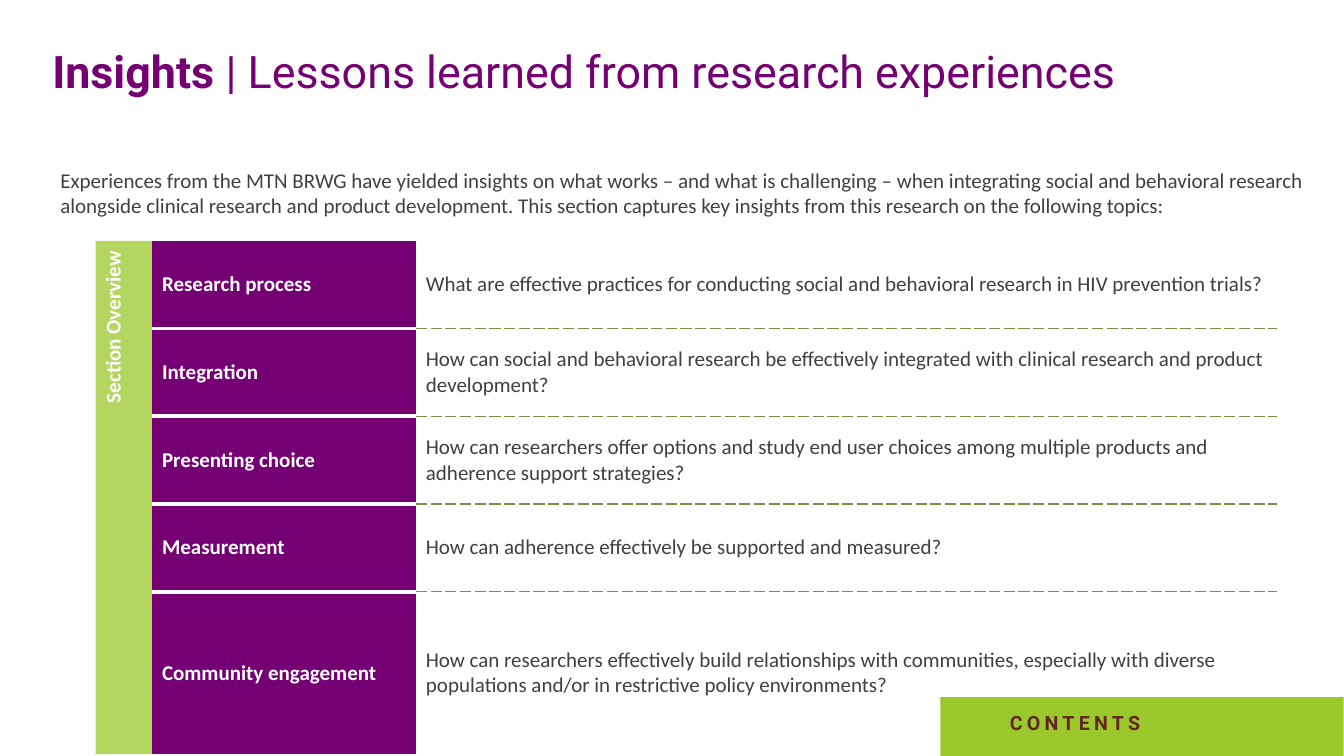
"""Build the Insights section overview slide."""
from dataclasses import dataclass

import lxml.etree
import pptx
import pptx.dml.color
import pptx.enum.shapes
import pptx.enum.text
import pptx.oxml.ns
import pptx.util

Cm = pptx.util.Cm
Pt = pptx.util.Pt
qn = pptx.oxml.ns.qn

COLOURS = {
    "purple": "740074",
    "green": "9BC82A",
    "dash": "77933C",
    "grey": "404040",
    "maroon": "632523",
    "white": "FFFFFF",
}
NO_GRID_STYLE = "{2D5ABB26-0587-4C30-8999-92F81FD0307C}"
COLUMN_WIDTHS = (1.42, 6.65, 21.69)
ROW_HEIGHT = 2.21


@dataclass(frozen=True)
class Style:
    size: float
    colour: str
    font: str = "Calibri"
    bold: bool = False
    spacing: int = 0


@dataclass(frozen=True)
class Topic:
    name: str
    question: str


@dataclass(frozen=True)
class Border:
    colour: str
    width: float
    dash: str


HEADING = Style(32, "purple", "Roboto", True)
SUBHEADING = Style(32, "purple", "Roboto")
BODY = Style(15, "grey")
LABEL = Style(15, "white", bold=True)
BUTTON = Style(14, "maroon", "Roboto", True, 3)

GAP = Border("white", 3, "solid")
RULE = Border("dash", 1, "sysDash")

INTRO = (
    "Experiences from the MTN BRWG have yielded insights on what works – and what is "
    "challenging – when integrating social and behavioral research alongside clinical "
    "research and product development. This section captures key insights from this "
    "research on the following topics:"
)
TOPICS = (
    Topic("Research process", "What are effective practices for conducting social and "
          "behavioral research in HIV prevention trials?"),
    Topic("Integration", "How can social and behavioral research be effectively integrated "
          "with clinical research and product development?"),
    Topic("Presenting choice", "How can researchers offer options and study end user choices "
          "among multiple products and adherence support strategies?"),
    Topic("Measurement", "How can adherence effectively be supported and measured?"),
    Topic("Community engagement", "How can researchers effectively build relationships with "
          "communities, especially with diverse populations and/or in restrictive policy "
          "environments?"),
)


def rgb(name: str) -> pptx.dml.color.RGBColor:
    return pptx.dml.color.RGBColor.from_string(COLOURS[name])


def add_span(para, text: str, style: Style) -> None:
    span = para.add_run()
    span.text = text
    span.font.size = Pt(style.size)
    span.font.name = style.font
    span.font.bold = style.bold
    span.font.color.rgb = rgb(style.colour)
    if style.spacing:
        span._r.get_or_add_rPr().set("spc", str(style.spacing * 100))


def add_text(shapes, place: tuple, *spans: tuple[str, Style]):
    box = shapes.add_textbox(*(Cm(length) for length in place))
    box.text_frame.word_wrap = True
    box.text_frame.vertical_anchor = pptx.enum.text.MSO_ANCHOR.MIDDLE
    for text, style in spans:
        add_span(box.text_frame.paragraphs[0], text, style)
    return box


def add_border(cell, edge: str, border: Border) -> None:
    line = lxml.etree.SubElement(cell._tc.get_or_add_tcPr(), qn(f"a:{edge}"),
                                 w=str(Pt(border.width)))
    fill = lxml.etree.SubElement(line, qn("a:solidFill"))
    lxml.etree.SubElement(fill, qn("a:srgbClr"), val=COLOURS[border.colour])
    lxml.etree.SubElement(line, qn("a:prstDash"), val=border.dash)


def fill_cell(cell, text: str, style: Style, fill: str = "") -> None:
    cell.vertical_anchor = pptx.enum.text.MSO_ANCHOR.MIDDLE
    add_span(cell.text_frame.paragraphs[0], text, style)
    if fill:
        cell.fill.solid()
        cell.fill.fore_color.rgb = rgb(fill)
    else:
        cell.fill.background()


def add_topics(page) -> None:
    frame = page.shapes.add_table(
        len(TOPICS), len(COLUMN_WIDTHS), Cm(2.41), Cm(6.07),
        Cm(sum(COLUMN_WIDTHS)), Cm(ROW_HEIGHT * len(TOPICS)))
    table = frame.table
    table.first_row = False
    table.horz_banding = False
    table._tbl.tblPr.find(qn("a:tableStyleId")).text = NO_GRID_STYLE
    for column, width in zip(table.columns, COLUMN_WIDTHS):
        column.width = Cm(width)
    for row in table.rows:
        row.height = Cm(ROW_HEIGHT)

    side = table.cell(0, 0)
    side.merge(table.cell(len(TOPICS) - 1, 0))
    fill_cell(side, "Section Overview", LABEL, "green")
    side.text_frame.paragraphs[0].alignment = pptx.enum.text.PP_ALIGN.RIGHT
    properties = side._tc.get_or_add_tcPr()
    properties.set("vert", "vert270")
    colour = properties.find(f"{qn('a:solidFill')}/{qn('a:srgbClr')}")
    lxml.etree.SubElement(colour, qn("a:alpha"), val="75000")

    for index, topic in enumerate(TOPICS):
        name, question = table.cell(index, 1), table.cell(index, 2)
        for cell, border in ((name, GAP), (question, RULE)):
            if index > 0:
                add_border(cell, "lnT", border)
            if index < len(TOPICS) - 1:
                add_border(cell, "lnB", border)
        fill_cell(name, topic.name, LABEL, "purple")
        fill_cell(question, topic.question, BODY)


def add_contents_button(page) -> None:
    group = page.shapes.add_group_shape()
    panel = group.shapes.add_shape(pptx.enum.shapes.MSO_SHAPE.RECTANGLE,
                                   Cm(23.7), Cm(17.57), Cm(10.16), Cm(8.51))
    panel.shadow.inherit = False
    panel.fill.solid()
    panel.fill.fore_color.rgb = rgb("green")
    panel.line.fill.background()
    box = add_text(group.shapes, (25.2, 17.8, 6.99, 0.86), ("CONTENTS", BUTTON))
    box.text_frame.vertical_anchor = pptx.enum.text.MSO_ANCHOR.TOP
    box.text_frame.auto_size = pptx.enum.text.MSO_AUTO_SIZE.SHAPE_TO_FIT_TEXT


def main() -> None:
    deck = pptx.Presentation()
    deck.slide_width, deck.slide_height = Cm(33.87), Cm(19.05)
    page = deck.slides.add_slide(deck.slide_layouts[6])
    add_text(page.shapes, (1.07, 0.43, 33.45, 2.69), ("Insights", HEADING),
             (" | Lessons learned from research experiences", SUBHEADING))
    add_topics(page)
    add_text(page.shapes, (1.27, 4.01, 32.18, 1.7), (INTRO, BODY))
    add_contents_button(page)
    deck.save("out.pptx")


if __name__ == "__main__":
    main()
